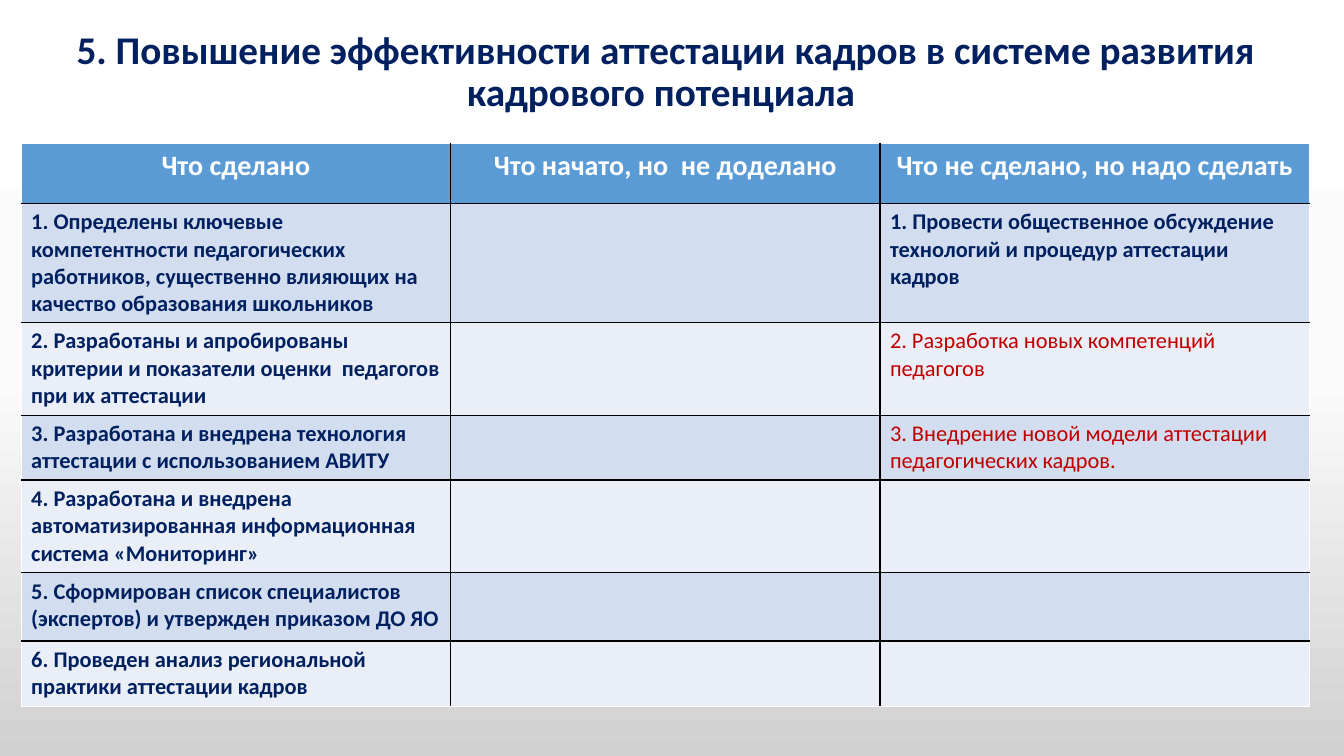
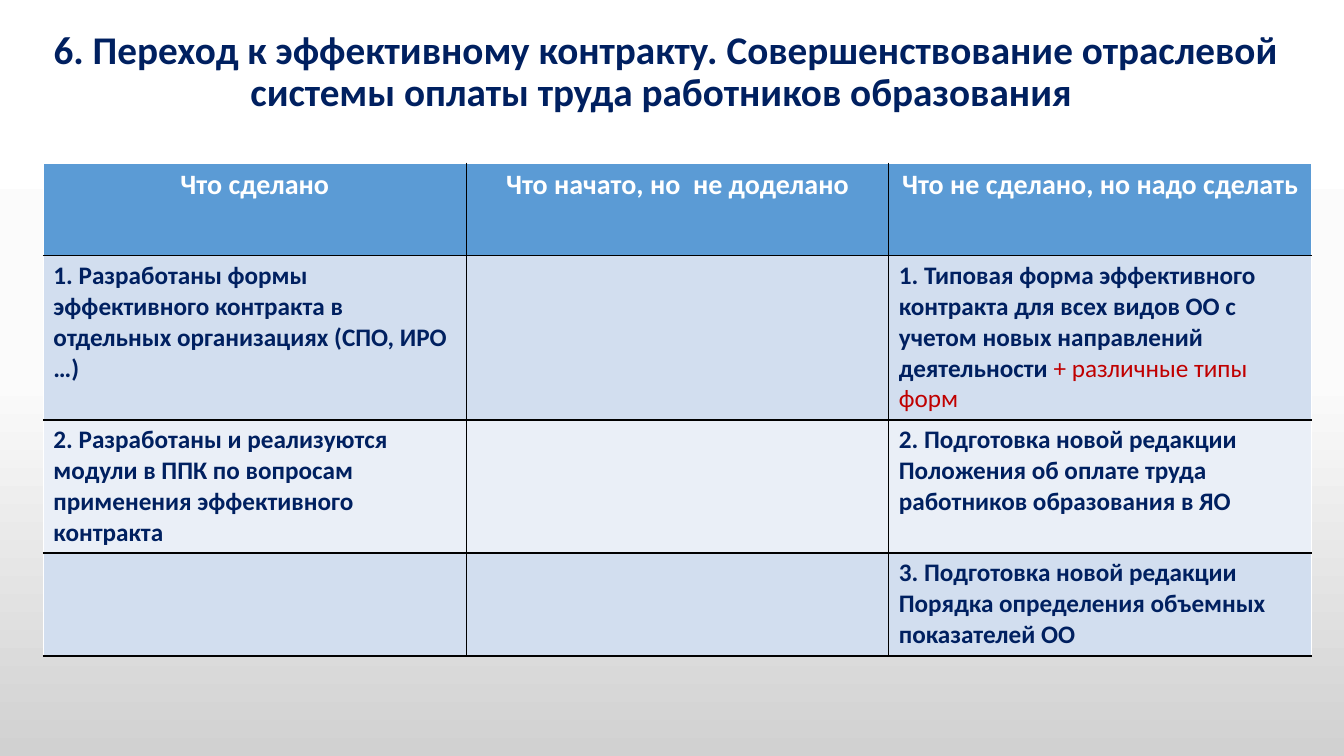
from dataclasses import dataclass

from lxml.etree import SubElement
from pptx import Presentation
from pptx.dml.color import RGBColor
from pptx.enum.text import MSO_ANCHOR, PP_ALIGN
from pptx.oxml import parse_xml
from pptx.oxml.ns import nsdecls, qn
from pptx.util import Pt


@dataclass(frozen=True)
class Theme:
    font: str = "Calibri"
    navy: str = "002060"
    red: str = "C00000"
    white: str = "FFFFFF"
    black: str = "000000"
    header: str = "5B9BD5"
    bands: tuple = ("D2DEEF", "EAEFF7")
    backdrop: tuple = ((0, "FFFFFF"), (50, "FBFBFB"), (100, "D1D1D1"))
    title_size: int = 28
    header_size: int = 20
    border: int = 1


@dataclass(frozen=True)
class Span:
    text: str
    added: bool = False  # later additions are red and not bold


HEADINGS = ("Что сделано", "Что начато, но  не доделано", "Что не сделано, но надо сделать")


class Slides:
    def __init__(self, theme):
        self.theme = theme
        self.deck = Presentation()
        self.deck.slide_width, self.deck.slide_height = Pt(960), Pt(540)
        self.page = None

    def add_page(self):
        self.page = self.deck.slides.add_slide(self.deck.slide_layouts[6])
        fill = self.page.background.fill
        fill.gradient()
        fill.gradient_angle = 270
        # Three stops replace the default ones
        stops = self.page.element.xpath(".//a:gsLst")[0]
        for stop in list(stops):
            stops.remove(stop)
        for percent, color in self.theme.backdrop:
            stops.append(parse_xml(
                f'<a:gs {nsdecls("a")} pos="{percent * 1000}"><a:srgbClr val="{color}"/></a:gs>'))

    def add_span(self, para, text, size, color, bold=True):
        span = para.add_run()
        span.text = text
        span.font.name = self.theme.font
        span.font.size = Pt(size)
        span.font.bold = bold
        span.font.color.rgb = RGBColor.from_string(color)

    def add_title(self, text):
        box = self.page.shapes.add_textbox(Pt(16.6), Pt(11), Pt(917.3), Pt(82))
        box.text_frame.word_wrap = True
        box.text_frame.vertical_anchor = MSO_ANCHOR.MIDDLE
        para = box.text_frame.paragraphs[0]
        para.alignment = PP_ALIGN.CENTER
        para.line_spacing = 0.9
        self.add_span(para, text, self.theme.title_size, self.theme.navy)

    def style_cell(self, cell, fill, borders):
        properties = cell._tc.get_or_add_tcPr()
        for side, color in borders.items():
            line = SubElement(properties, qn(f"a:ln{side}"), w=str(Pt(self.theme.border)))
            solid = SubElement(line, qn("a:solidFill"))
            SubElement(solid, qn("a:srgbClr"), val=color)
        cell.fill.solid()
        cell.fill.fore_color.rgb = RGBColor.from_string(fill)

    def add_table(self, left, top, width, heights, rows, size, last_border):
        theme = self.theme
        last_row, last_column = len(heights) - 1, len(HEADINGS) - 1
        frame = self.page.shapes.add_table(
            len(heights), len(HEADINGS), Pt(left), Pt(top), Pt(width), Pt(sum(heights)))
        table = frame.table
        table.first_row = table.horz_banding = False
        for column in table.columns:
            column.width = Pt(width / len(HEADINGS))

        # Fills and borders: white on the outside, black between cells
        for r, height in enumerate(heights):
            table.rows[r].height = Pt(height)
            for c in range(len(HEADINGS)):
                self.style_cell(
                    table.cell(r, c),
                    theme.bands[(r - 1) % 2] if r else theme.header,
                    {"L": theme.black if c else theme.white,
                     "R": theme.white if c == last_column else theme.black,
                     "T": theme.black if r else theme.white,
                     "B": last_border if r == last_row else theme.black})

        # Header row
        for c, heading in enumerate(HEADINGS):
            para = table.cell(0, c).text_frame.paragraphs[0]
            para.alignment = PP_ALIGN.CENTER
            self.add_span(para, heading, theme.header_size, theme.white)

        # Body: the middle column stays empty
        for r, (done, to_do) in enumerate(rows, start=1):
            for c, spans in ((0, done), (last_column, to_do)):
                para = table.cell(r, c).text_frame.paragraphs[0]
                for span in spans:
                    self.add_span(para, span.text, size,
                                  theme.red if span.added else theme.navy, not span.added)


def main():
    theme = Theme()
    slides = Slides(theme)

    # Staff appraisal
    slides.add_page()
    slides.add_title("5. Повышение эффективности аттестации кадров в системе развития "
                     "кадрового потенциала ")
    slides.add_table(15.1, 102.4, 920.2, (42.8, 85.2, 66.2, 46.3, 66.2, 48.8, 46.6), (
        ([Span("1. Определены ключевые компетентности педагогических работников, "
               "существенно влияющих на качество образования школьников")],
         [Span("1. Провести общественное обсуждение  технологий и процедур аттестации кадров")]),
        ([Span("2. Разработаны и апробированы  критерии и показатели оценки  педагогов "
               "при их аттестации")],
         [Span("2. Разработка новых компетенций педагогов", added=True)]),
        ([Span("3. Разработана и внедрена технология аттестации с использованием АВИТУ")],
         [Span("3. Внедрение новой модели аттестации педагогических кадров.", added=True)]),
        ([Span("4. Разработана и внедрена автоматизированная информационная система "
               "«Мониторинг»")], []),
        ([Span("5. Сформирован список специалистов (экспертов) и утвержден приказом ДО ЯО")], []),
        ([Span("6. Проведен анализ региональной практики аттестации кадров")], []),
    ), size=16, last_border=theme.white)

    # Performance-based contract
    slides.add_page()
    slides.add_title("6. Переход к эффективному контракту. Совершенствование отраслевой "
                     "системы оплаты труда работников образования ")
    slides.add_table(31, 116.6, 905.8, (66.2, 117.2, 95, 73.6), (
        ([Span("1. Разработаны формы эффективного контракта в отдельных организациях "
               "(СПО, ИРО …)")],
         [Span("1. Типовая форма эффективного контракта для всех видов ОО с учетом новых "
               "направлений деятельности "),
          Span("+ различные типы форм", added=True)]),
        ([Span("2. Разработаны и реализуются модули в ППК по вопросам применения "
               "эффективного контракта")],
         [Span("2. Подготовка новой редакции Положения об оплате труда работников "
               "образования в ЯО")]),
        ([], [Span("3. Подготовка новой редакции Порядка определения объемных "
                   "показателей ОО")]),
    ), size=18, last_border=theme.black)

    slides.deck.save("out.pptx")


if __name__ == "__main__":
    main()
